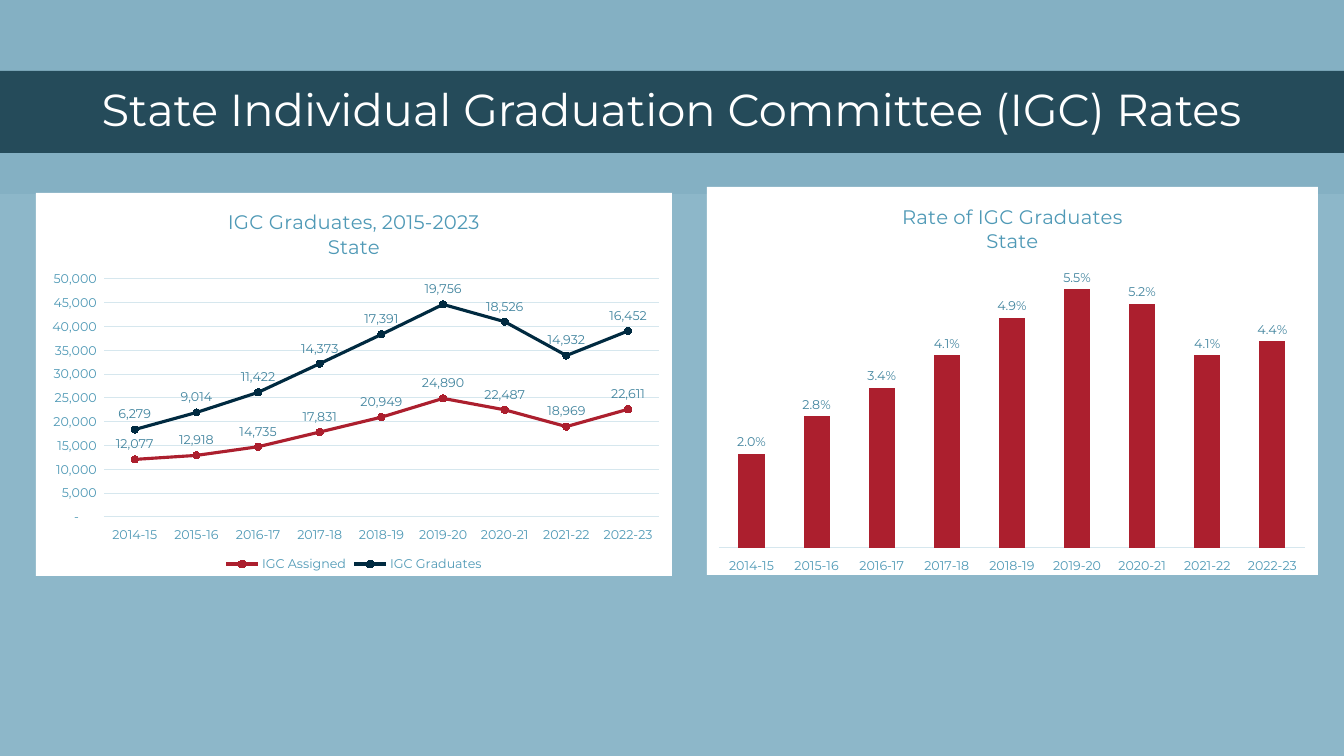
from lxml import etree
from pptx import Presentation
from pptx.chart.data import CategoryChartData
from pptx.dml.color import RGBColor
from pptx.enum.chart import (XL_CHART_TYPE, XL_LABEL_POSITION, XL_LEGEND_POSITION,
                             XL_MARKER_STYLE, XL_TICK_LABEL_POSITION, XL_TICK_MARK)
from pptx.enum.shapes import MSO_SHAPE
from pptx.enum.text import MSO_ANCHOR, MSO_AUTO_SIZE, PP_ALIGN
from pptx.oxml import parse_xml
from pptx.oxml.ns import nsdecls, qn
from pptx.util import Pt

LINE_CHART = XL_CHART_TYPE.LINE_MARKERS_STACKED
COLUMN_CHART = XL_CHART_TYPE.COLUMN_CLUSTERED
ABOVE = XL_LABEL_POSITION.ABOVE
OUTSIDE_END = XL_LABEL_POSITION.OUTSIDE_END
NO_TICK = XL_TICK_MARK.NONE

EMU_PER_PX = 914400 / 100.8
FONT = "Montserrat"
TITLE_ONLY_LAYOUT = 5

SKY = RGBColor(0x8D, 0xB7, 0xC9)
BAND_BLUE = RGBColor(0x84, 0xB0, 0xC3)
DEEP_TEAL = RGBColor(0x25, 0x4B, 0x5A)
WHITE = RGBColor(0xFF, 0xFF, 0xFF)
AXIS_BLUE = RGBColor(0x4F, 0x99, 0xB6)
LABEL_BLUE = RGBColor(0x41, 0x84, 0x9E)
GRID_BLUE = RGBColor(0xD6, 0xE7, 0xEE)
RED = RGBColor(0xAC, 0x1F, 0x2E)
NAVY = RGBColor(0x00, 0x2A, 0x40)

COUNT_FORMAT = '_(* #,##0_);_(* \\(#,##0\\);_(* "-"??_);_('
RATE_FORMAT = "0.0%"
SCHOOL_YEARS = [f"{year}-{year - 1999}" for year in range(2014, 2023)]
ASSIGNED = [12077, 12918, 14735, 17831, 20949, 24890, 22487, 18969, 22611]
GRADUATES = [6279, 9014, 11422, 14373, 17391, 19756, 18526, 14932, 16452]
RATES = [0.02, 0.028, 0.034, 0.041, 0.049, 0.055, 0.052, 0.041, 0.044]


def px(*lengths):
    return [round(length * EMU_PER_PX) for length in lengths]


def style_font(font, size, color):
    font.name = FONT
    font.size = Pt(size)
    font.bold = False
    font.color.rgb = color


def add_top_band(page):
    band = page.shapes.add_shape(MSO_SHAPE.RECTANGLE, *px(0, 0, 1344, 194))
    band.shadow.inherit = False
    band.fill.solid()
    band.fill.fore_color.rgb = BAND_BLUE
    band.line.fill.background()
    page.shapes._spTree.insert(2, band._element)


def set_title(page, text):
    title = page.shapes.title
    title.left, title.top, title.width, title.height = px(0, 71, 1344, 82)
    title.fill.solid()
    title.fill.fore_color.rgb = DEEP_TEAL
    frame = title.text_frame
    frame.text = text
    frame.word_wrap = True
    frame.auto_size = MSO_AUTO_SIZE.NONE
    frame.vertical_anchor = MSO_ANCHOR.MIDDLE
    para = frame.paragraphs[0]
    para.alignment = PP_ALIGN.CENTER
    para.line_spacing = 0.9
    style_font(para.font, 32, WHITE)


def fill_chart_white(chart):
    fill = parse_xml(f'<c:spPr {nsdecls("c", "a")}><a:solidFill><a:srgbClr val="{WHITE}"/>'
                     '</a:solidFill><a:ln><a:noFill/></a:ln></c:spPr>')
    chart._chartSpace.find(qn("c:chart")).addnext(fill)


def place_plot(chart, chart_box, plot_box):
    """Fix the inner plot area; both boxes are left, top, width, height in px on the slide."""
    left, top, width, height = chart_box
    plot_left, plot_top, plot_width, plot_height = plot_box
    plot_area = chart._chartSpace.find(qn("c:chart")).find(qn("c:plotArea"))
    for old_layout in plot_area.findall(qn("c:layout")):
        plot_area.remove(old_layout)
    layout = etree.Element(qn("c:layout"))
    manual = etree.SubElement(layout, qn("c:manualLayout"))
    settings = {"layoutTarget": "inner", "xMode": "edge", "yMode": "edge",
                "x": (plot_left - left) / width, "y": (plot_top - top) / height,
                "w": plot_width / width, "h": plot_height / height}
    for name, value in settings.items():
        etree.SubElement(manual, qn(f"c:{name}")).set("val", str(value))
    plot_area.insert(0, layout)


def set_chart_title(chart, lines):
    chart.has_title = True
    chart.chart_title.include_in_layout = False
    frame = chart.chart_title.text_frame
    for number, line in enumerate(lines):
        para = frame.add_paragraph() if number else frame.paragraphs[0]
        para.text = line
        style_font(para.font, 14, AXIS_BLUE)


def style_axis_line(line):
    line.color.rgb = GRID_BLUE
    line.width = Pt(0.75)


def style_axis(axis):
    axis.major_tick_mark = axis.minor_tick_mark = NO_TICK
    style_font(axis.tick_labels.font, 9, AXIS_BLUE)


def add_year_chart(page, kind, chart_box, plot_box, title_lines, series, number_format,
                   label_position, maximum):
    data = CategoryChartData(number_format=number_format)
    data.categories = SCHOOL_YEARS
    for name, values in series:
        data.add_series(name, values)
    chart = page.shapes.add_chart(kind, *px(*chart_box), data).chart
    style_font(chart.font, 10, DEEP_TEAL)
    fill_chart_white(chart)
    place_plot(chart, chart_box, plot_box)
    set_chart_title(chart, title_lines)
    chart.has_legend = False

    style_axis(chart.category_axis)
    chart.category_axis.tick_label_position = XL_TICK_LABEL_POSITION.LOW
    style_axis_line(chart.category_axis.format.line)
    chart.value_axis.minimum_scale = 0
    chart.value_axis.maximum_scale = maximum

    plot = chart.plots[0]
    plot.vary_by_categories = False
    plot.has_data_labels = True
    labels = plot.data_labels
    labels.show_value = True
    labels.position = label_position
    labels.number_format = number_format
    labels.number_format_is_linked = False
    style_font(labels.font, 9, LABEL_BLUE)
    return chart


def add_graduates_chart(page):
    chart = add_year_chart(
        page, LINE_CHART, (36, 193, 636, 383), (104, 279, 555, 238),
        ["IGC Graduates, 2015-2023", "State"],
        [("IGC Assigned", ASSIGNED), ("IGC Graduates", GRADUATES)],
        COUNT_FORMAT, ABOVE, 50000)
    axis = chart.value_axis
    style_axis(axis)
    axis.major_unit = 5000
    axis.tick_labels.number_format = COUNT_FORMAT
    axis.tick_labels.number_format_is_linked = False
    axis.format.line.fill.background()
    style_axis_line(axis.major_gridlines.format.line)

    chart.has_legend = True
    chart.legend.position = XL_LEGEND_POSITION.BOTTOM
    chart.legend.include_in_layout = False
    style_font(chart.legend.font, 9, AXIS_BLUE)

    for series, color in zip(chart.plots[0].series, (RED, NAVY)):
        series.smooth = False
        series.format.line.color.rgb = color
        series.format.line.width = Pt(2.25)
        marker = series.marker
        marker.style = XL_MARKER_STYLE.CIRCLE
        marker.size = 5
        marker.format.fill.solid()
        marker.format.fill.fore_color.rgb = color
        marker.format.line.color.rgb = color


def add_rate_chart(page):
    chart = add_year_chart(
        page, COLUMN_CHART, (707, 187, 611, 388), (719, 266, 586, 282),
        ["Rate of IGC Graduates", "State"], [("Series 1", RATES)],
        RATE_FORMAT, OUTSIDE_END, 0.06)
    chart.value_axis.visible = False
    chart.value_axis.has_major_gridlines = False
    plot = chart.plots[0]
    plot.gap_width = 150
    plot.overlap = -25
    fill = plot.series[0].format.fill
    fill.solid()
    fill.fore_color.rgb = RED


def main():
    deck = Presentation()
    deck.slide_width, deck.slide_height = px(1344, 756)
    page = deck.slides.add_slide(deck.slide_layouts[TITLE_ONLY_LAYOUT])
    page.background.fill.solid()
    page.background.fill.fore_color.rgb = SKY
    add_top_band(page)
    set_title(page, "State Individual Graduation Committee (IGC) Rates")
    add_graduates_chart(page)
    add_rate_chart(page)
    deck.save("out.pptx")


if __name__ == "__main__":
    main()
